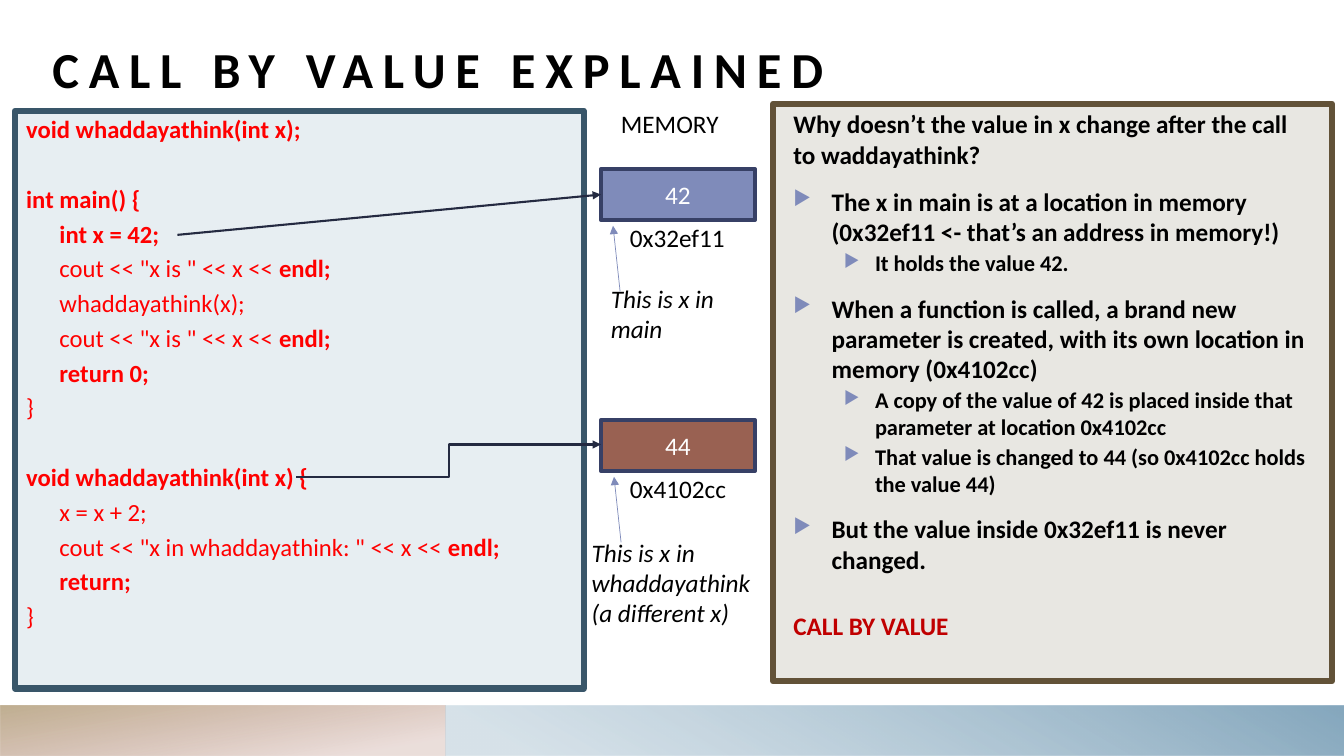
from dataclasses import dataclass

import lxml.etree
import pptx
import pptx.dml.color
import pptx.enum.shapes
import pptx.enum.text
import pptx.oxml.ns
import pptx.util

Inches = pptx.util.Inches
Pt = pptx.util.Pt
RGBColor = pptx.dml.color.RGBColor
qn = pptx.oxml.ns.qn
MSO_SHAPE = pptx.enum.shapes.MSO_SHAPE
MSO_CONNECTOR = pptx.enum.shapes.MSO_CONNECTOR
MSO_ANCHOR = pptx.enum.text.MSO_ANCHOR
PP_ALIGN = pptx.enum.text.PP_ALIGN

FONT = "Calibri"
BLACK = RGBColor(0x00, 0x00, 0x00)
WHITE = RGBColor(0xFF, 0xFF, 0xFF)
RED = RGBColor(0xFF, 0x00, 0x00)
DARK_RED = RGBColor(0xC0, 0x00, 0x00)
CODE_FILL = RGBColor(0xE7, 0xEE, 0xF2)
CODE_LINE = RGBColor(0x39, 0x56, 0x69)
NOTES_FILL = RGBColor(0xE8, 0xE7, 0xE2)
NOTES_LINE = RGBColor(0x62, 0x52, 0x38)
BLUE = RGBColor(0x7F, 0x8B, 0xBA)
BROWN = RGBColor(0x99, 0x61, 0x52)
CELL_LINE = RGBColor(0x37, 0x40, 0x66)
NAVY = RGBColor(0x24, 0x2A, 0x41)


@dataclass
class Run:
    text: str
    size: float = 18
    color: RGBColor = BLACK
    bold: bool = False
    italic: bool = False


@dataclass
class Para:
    runs: list[Run]
    before: float = 0
    after: float = 0
    spacing: float = 1.0
    left: float = 0
    hanging: float = 0
    align: PP_ALIGN = PP_ALIGN.LEFT


@dataclass
class Band:
    left: float
    width: float
    rotation: int
    angle: int
    stops: list[tuple[int, RGBColor, int]]


@dataclass
class Cell:
    top: float
    value: str
    fill: RGBColor
    address: str
    note: list[str]
    note_box: tuple[float, float, float, float]


@dataclass
class Arrow:
    start: tuple[float, float]
    end: tuple[float, float]
    color: RGBColor = NAVY
    width: float = 1.5
    kind: MSO_CONNECTOR = MSO_CONNECTOR.STRAIGHT


BANDS = [
    Band(0, 13.33 - 8.91, 180, 100,
         [(14, RGBColor(0xBA, 0x8B, 0x7F), 28), (100, RGBColor(0xB5, 0xA1, 0x7E), 85)]),
    Band(4.42, 8.91, 0, 240,
         [(9, RGBColor(0xB6, 0xCB, 0xD8), 55), (99, RGBColor(0x86, 0xA8, 0xBE), 100)]),
]

# (indent level, blank line above, plain text, bold text)
CODE = [
    (0, False, "", "void whaddayathink(int x);"),
    (0, True, "", "int main() {"),
    (1, False, "", "int x = 42;"),
    (1, False, "cout << \"x is \" << x << ", "endl;"),
    (1, False, "whaddayathink(x);", ""),
    (1, False, "cout << \"x is \" << x << ", "endl;"),
    (1, False, "", "return 0;"),
    (0, False, "}", ""),
    (0, True, "", "void whaddayathink(int x) {"),
    (1, False, "x = x + 2;", ""),
    (1, False, "cout << \"x in whaddayathink: \" << x << ", "endl;"),
    (1, False, "", "return;"),
    (0, False, "}", ""),
]


def point(text: str) -> Para:
    return Para([Run(text, bold=True)], 2, left=0.38, hanging=0.38)


def detail(text: str, after: float = 0) -> Para:
    return Para([Run(text, 16, bold=True)], 2, after, left=0.81, hanging=0.31)


NOTES = [
    Para([Run("Why doesn’t the value in x change after the call to waddayathink?", bold=True)], 2, 10),
    point("The x in main is at a location in memory (0x32ef11 <- that’s an address in memory!)"),
    detail("It holds the value 42.", 10),
    point("When a function is called, a brand new parameter is created, "
          "with its own location in memory (0x4102cc)"),
    detail("A copy of the value of 42 is placed inside that parameter at location 0x4102cc"),
    detail("That value is changed to 44 (so 0x4102cc holds the value 44)", 10),
    point("But the value inside 0x32ef11 is never changed."),
    Para([Run("CALL BY VALUE", color=DARK_RED, bold=True)], 26),
]

CELLS = [
    Cell(1.68, "42", BLUE, "0x32ef11", ["This is x in", "main"], (5.96, 2.76, 1.41, 0.71)),
    Cell(4.17, "44", BROWN, "0x4102cc", ["This is x in", "whaddayathink", "(a different x)"],
         (5.77, 5.28, 1.91, 1.01)),
]

ARROWS = [
    Arrow((6.15, 2.89), (6.08, 2.24), BLUE, 0.5),
    Arrow((6.16, 5.38), (6.09, 4.73), BLUE, 0.5),
    Arrow((1.76, 2.33), (5.96, 1.93)),
    Arrow((2.94, 4.73), (5.96, 4.41), kind=MSO_CONNECTOR.ELBOW),
]


def sub(parent, tag: str, **attrs):
    return lxml.etree.SubElement(parent, qn(tag), {k: str(v) for k, v in attrs.items()})


def add_run(p, run: Run):
    r = p.add_run()
    r.text = run.text
    r.font.name = FONT
    r.font.size = Pt(run.size)
    r.font.bold = run.bold
    r.font.italic = run.italic
    r.font.color.rgb = run.color
    return r


def write(tf, paras: list[Para]) -> None:
    tf.word_wrap = True
    for i, para in enumerate(paras):
        p = tf.add_paragraph() if i else tf.paragraphs[0]
        p.alignment = para.align
        p.space_before, p.space_after = Pt(para.before), Pt(para.after)
        p.line_spacing = para.spacing
        pPr = p._p.get_or_add_pPr()
        pPr.set("marL", str(Inches(para.left)))
        pPr.set("indent", str(-Inches(para.hanging)))
        if para.hanging:
            sub(sub(pPr, "a:buClr"), "a:srgbClr", val=BLUE)
            sub(pPr, "a:buSzPct", val=80000)
            sub(pPr, "a:buChar", char="▶")
        for run in para.runs:
            add_run(p, run)


def add_box(s, left: float, top: float, width: float, height: float):
    sp = s.shapes.add_shape(MSO_SHAPE.RECTANGLE, *map(Inches, (left, top, width, height)))
    sp.shadow.inherit = False
    return sp


def add_panel(s, box: tuple[float, float, float, float], fill: RGBColor, line: RGBColor, weight: float):
    sp = add_box(s, *box)
    sp.fill.solid()
    sp.fill.fore_color.rgb = fill
    sp.line.color.rgb = line
    sp.line.width = Pt(weight)
    return sp


def add_text(s, box: tuple[float, float, float, float], paras: list[Para]) -> None:
    write(s.shapes.add_textbox(*map(Inches, box)).text_frame, paras)


def add_band(s, band: Band) -> None:
    sp = add_box(s, band.left, 7, band.width, 0.5)
    sp.line.fill.background()
    sp.rotation = band.rotation
    spPr = sp._element.spPr
    spPr.find(qn("a:xfrm")).set("flipH", "1")
    grad = lxml.etree.Element(qn("a:gradFill"), rotWithShape="1")
    stops = sub(grad, "a:gsLst")
    for position, color, opacity in band.stops:
        clr = sub(sub(stops, "a:gs", pos=position * 1000), "a:srgbClr", val=color)
        sub(clr, "a:alpha", val=opacity * 1000)
    sub(grad, "a:lin", ang=band.angle * 60000, scaled=0)
    spPr.find(qn("a:prstGeom")).addnext(grad)


def add_cell(s, cell: Cell) -> None:
    sp = add_panel(s, (5.96, cell.top, 1.53, 0.5), cell.fill, CELL_LINE, 3)
    sp.text_frame.vertical_anchor = MSO_ANCHOR.MIDDLE
    write(sp.text_frame, [Para([Run(cell.value, color=WHITE)], align=PP_ALIGN.CENTER)])
    add_text(s, (6.15, cell.top + 0.48, 1.3, 0.4), [Para([Run(cell.address)])])
    add_text(s, cell.note_box, [Para([Run(line, italic=True)]) for line in cell.note])


def add_arrow(s, arrow: Arrow) -> None:
    c = s.shapes.add_connector(arrow.kind, *map(Inches, arrow.start + arrow.end))
    c.line.color.rgb = arrow.color
    c.line.width = Pt(arrow.width)
    sub(c.line._get_or_add_ln(), "a:tailEnd", type="triangle")
    sub(c._element.spPr, "a:effectLst")


def add_title(s, text: str) -> None:
    title = s.shapes.title
    title.left, title.top, title.width, title.height = map(Inches, (0.52, 0.12, 9.4, 0.86))
    tf = title.text_frame
    tf.margin_left = tf.margin_top = tf.margin_right = tf.margin_bottom = 0
    tf.vertical_anchor = MSO_ANCHOR.BOTTOM
    p = tf.paragraphs[0]
    p.alignment = PP_ALIGN.LEFT
    add_run(p, Run(text, 36, bold=True)).font._element.set("spc", "700")


def add_code(s) -> None:
    tf = add_panel(s, (0.15, 1.1, 5.64, 5.73), CODE_FILL, CODE_LINE, 4.5).text_frame
    tf.margin_left = tf.margin_top = tf.margin_right = tf.margin_bottom = 0
    tf.vertical_anchor = MSO_ANCHOR.TOP
    write(tf, [
        Para([Run(text, 17.6, RED, bold) for text, bold in ((plain, False), (strong, True)) if text],
             before=26.8 if gap else 1.6, spacing=1.1, left=0.44 if level else 0.11)
        for level, gap, plain, strong in CODE
    ])


def main() -> None:
    prs = pptx.Presentation()
    prs.slide_width, prs.slide_height = Inches(13.33), Inches(7.5)
    s = prs.slides.add_slide(prs.slide_layouts[5])
    for band in BANDS:
        add_band(s, band)
    add_title(s, "CALL BY VALUE EXPLAINED")
    add_code(s)
    add_panel(s, (7.67, 1.03, 5.54, 5.73), NOTES_FILL, NOTES_LINE, 4.5)
    add_text(s, (7.77, 1.03, 5.31, 5.73), NOTES)
    add_text(s, (6.06, 1.03, 1.31, 0.4), [Para([Run("MEMORY")])])
    for cell in CELLS:
        add_cell(s, cell)
    for arrow in ARROWS:
        add_arrow(s, arrow)
    prs.save("out.pptx")


if __name__ == "__main__":
    main()
